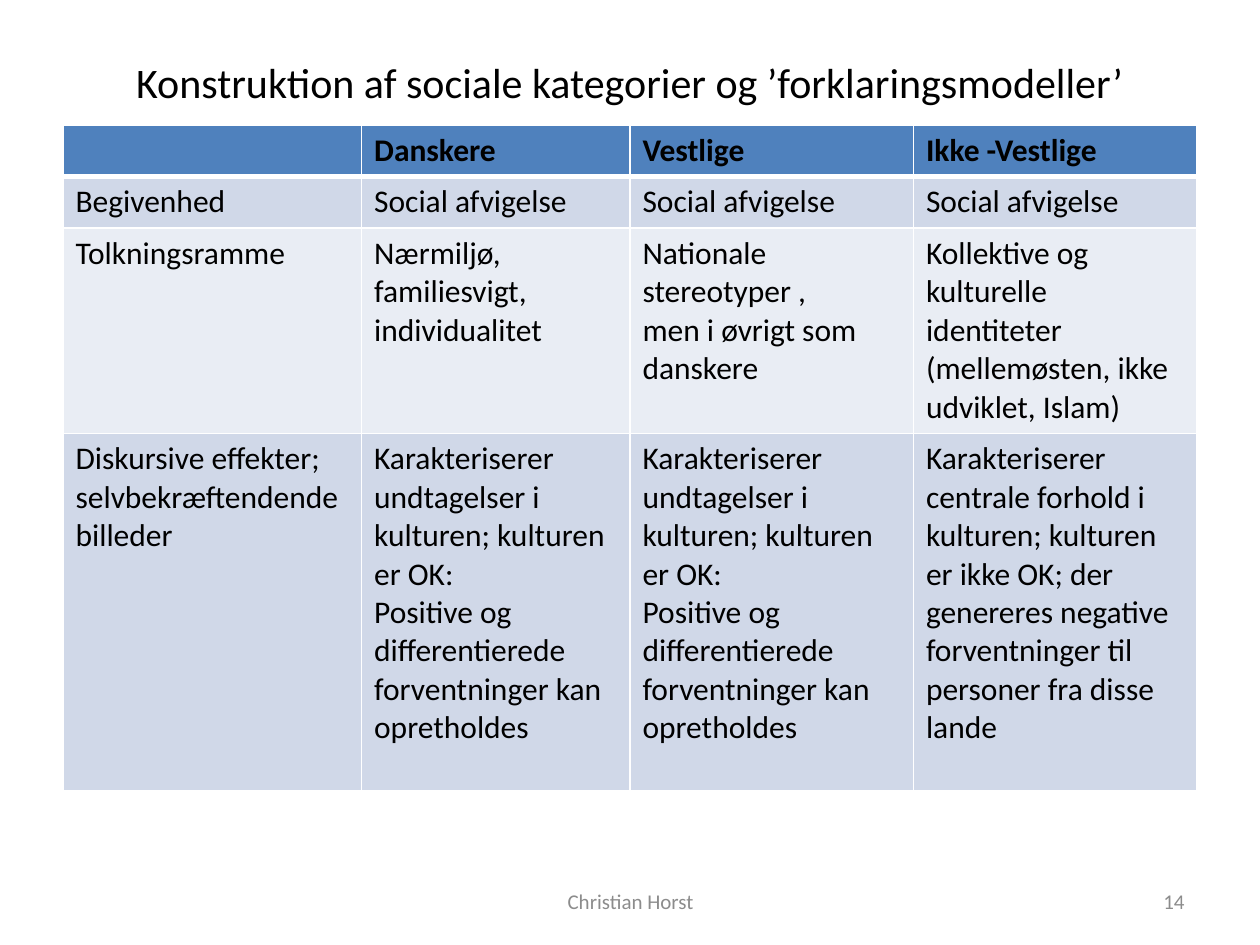
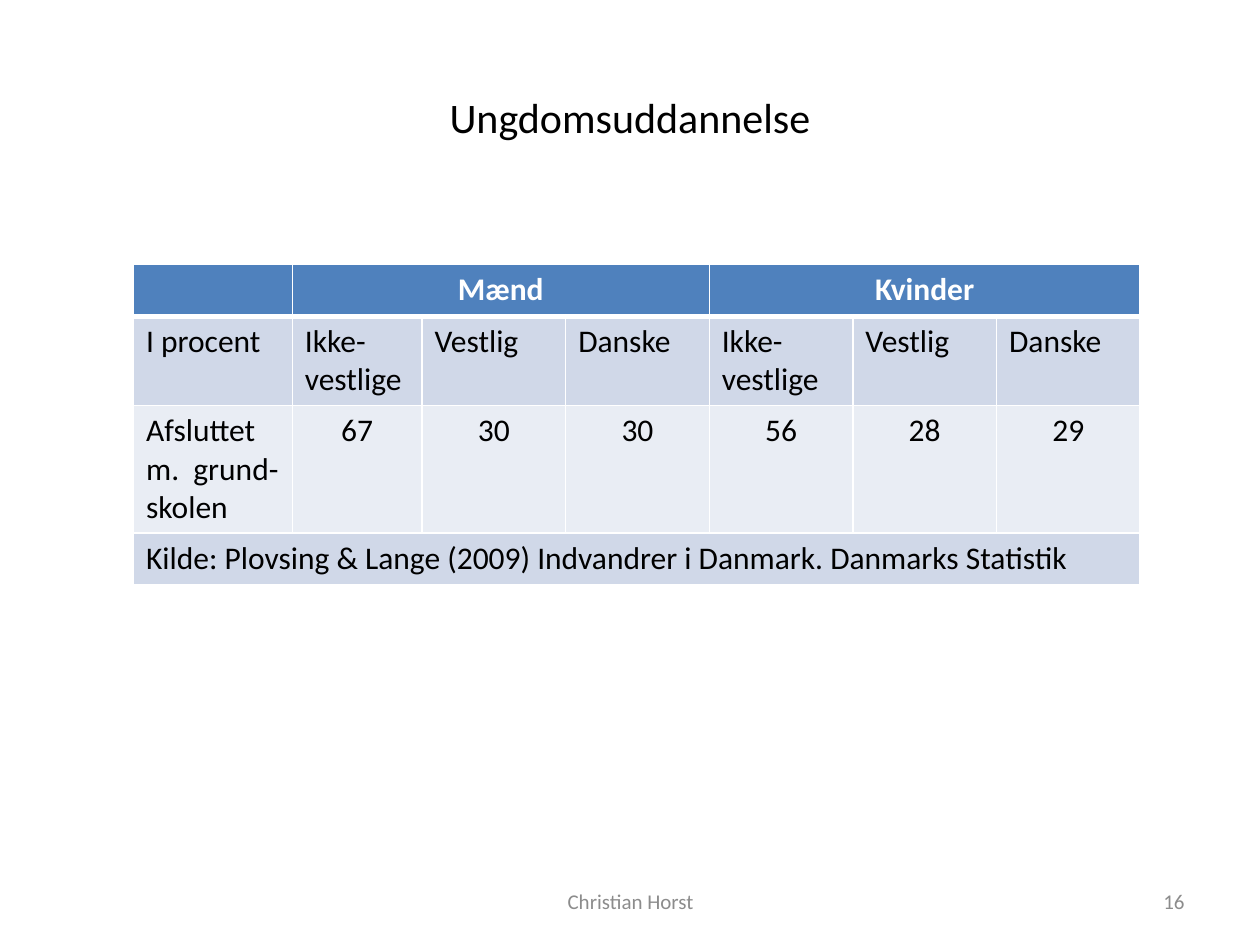
from dataclasses import dataclass

from lxml import etree
from pptx import Presentation
from pptx.dml.color import RGBColor
from pptx.enum.text import MSO_ANCHOR, PP_ALIGN
from pptx.oxml.ns import qn
from pptx.util import Inches, Pt

LEFT, CENTER, RIGHT = PP_ALIGN.LEFT, PP_ALIGN.CENTER, PP_ALIGN.RIGHT
MIDDLE = MSO_ANCHOR.MIDDLE


@dataclass(frozen=True)
class Theme:
    font: str = "Calibri"
    title_size: int = 24
    table_size: int = 18
    footer_size: int = 12
    text: str = "000000"
    white: str = "FFFFFF"
    footer: str = "8C8C8C"
    header_fill: str = "4F81BD"
    band_fills: tuple = ("D0D8E8", "E9EDF4")
    border: int = 1
    header_border: int = 3


class Deck:
    def __init__(self, theme):
        self.theme = theme
        self.presentation = Presentation()
        self.presentation.slide_width = Inches(10)
        self.presentation.slide_height = Inches(7.5)
        self.slide = None

    def add_slide(self, title, title_height, number):
        layout = self.presentation.slide_layouts[6]
        self.slide = self.presentation.slides.add_slide(layout)
        theme = self.theme
        self.add_text(title, (0.5, 0.3, 9, title_height), CENTER, theme.title_size, theme.text)
        footers = (
            (str(number), (7.17, 6.95, 2.33, 0.4), RIGHT),
            ("Christian Horst", (3.42, 6.95, 3.17, 0.4), CENTER),
        )
        for text, box, alignment in footers:
            self.add_text(text, box, alignment, theme.footer_size, theme.footer)

    def add_text(self, text, box, alignment, size, color):
        shape = self.slide.shapes.add_textbox(*map(Inches, box))
        frame = shape.text_frame
        frame.word_wrap = True
        frame.vertical_anchor = MIDDLE
        self.fill_text(frame, text, alignment, size, color)

    def fill_text(self, frame, text, alignment, size, color, bold=False):
        frame.text = text
        font_format = {"name": self.theme.font, "size": Pt(size), "bold": bold}
        for paragraph in frame.paragraphs:
            paragraph.alignment = alignment
            for run in paragraph.runs:
                for name, value in font_format.items():
                    setattr(run.font, name, value)
                run.font.color.rgb = RGBColor.from_string(color)

    def add_table(self, rows, position, widths, heights, header_color,
                  header_alignment=LEFT, centered_rows=(), spans=()):
        theme = self.theme
        left, top = map(Inches, position)
        table = self.slide.shapes.add_table(
            len(rows), len(widths), left, top,
            Inches(sum(widths)), Inches(sum(heights))).table
        for column, width in zip(table.columns, widths):
            column.width = Inches(width)
        for row, height in zip(table.rows, heights):
            row.height = Inches(height)
        for row_index, texts in enumerate(rows):
            is_header = row_index == 0
            fill = theme.header_fill if is_header else theme.band_fills[(row_index - 1) % 2]
            color = header_color if is_header else theme.text
            for column_index, text in enumerate(texts):
                cell = table.cell(row_index, column_index)
                cell.fill.solid()
                cell.fill.fore_color.rgb = RGBColor.from_string(fill)
                self.add_borders(cell, row_index)
                alignment = header_alignment if is_header else LEFT
                if row_index in centered_rows and column_index > 0:
                    alignment = CENTER
                if text:
                    self.fill_text(cell.text_frame, text, alignment,
                                   theme.table_size, color, is_header)
        for row_index, first, last in spans:
            table.cell(row_index, first).merge(table.cell(row_index, last))

    def add_borders(self, cell, row_index):
        theme = self.theme
        thick_side = {0: "a:lnB", 1: "a:lnT"}.get(row_index)
        properties = cell._tc.get_or_add_tcPr()
        for index, side in enumerate(("a:lnL", "a:lnR", "a:lnT", "a:lnB")):
            width = theme.header_border if side == thick_side else theme.border
            line = etree.Element(qn(side), w=str(Pt(width)))
            fill = etree.SubElement(line, qn("a:solidFill"))
            etree.SubElement(fill, qn("a:srgbClr"), val=theme.white)
            properties.insert(index, line)


def build_categories(deck):
    deck.add_slide("Konstruktion af sociale kategorier og ’forklaringsmodeller’", 0.69, 14)
    accepted = ("Karakteriserer undtagelser i kulturen; kulturen er OK:\n"
                "Positive og differentierede forventninger kan opretholdes")
    rows = (
        ("", "Danskere", "Vestlige", "Ikke -Vestlige"),
        ("Begivenhed",) + ("Social afvigelse",) * 3,
        ("Tolkningsramme",
         "Nærmiljø, familiesvigt, individualitet",
         "Nationale stereotyper ,\vmen i øvrigt som danskere",
         "Kollektive og kulturelle identiteter (mellemøsten, ikke udviklet, Islam)"),
        ("Diskursive effekter;\nselvbekræftendende\nbilleder",
         accepted,
         accepted,
         "Karakteriserer centrale forhold i kulturen; kulturen er ikke OK; "
         "der genereres negative forventninger til personer fra disse lande"),
    )
    deck.add_table(rows, (0.5, 0.99), (2.37, 2.13, 2.25, 2.25),
                   (0.41, 0.41, 1.63, 2.84), deck.theme.text)


def build_education(deck):
    deck.add_slide("Ungdomsuddannelse", 1.25, 16)
    source = "Kilde: Plovsing & Lange (2009) Indvandrer i Danmark. Danmarks Statistik"
    rows = (
        ("", "Mænd", "", "", "Kvinder", "", ""),
        ("I procent", "Ikke-vestlige", "Vestlig", "Danske", "Ikke- vestlige", "Vestlig", "Danske"),
        ("Afsluttet m.  grund-skolen", "67", "30", "30", "56", "28", "29"),
        (source,) + ("",) * 6,
    )
    deck.add_table(rows, (1.06, 2.1), (1.26, 1.03) + (1.14,) * 5,
                   (0.41, 0.71, 1.01, 0.41), deck.theme.white,
                   header_alignment=CENTER, centered_rows=(2,),
                   spans=((0, 1, 3), (0, 4, 6), (3, 0, 6)))


def main():
    deck = Deck(Theme())
    build_categories(deck)
    build_education(deck)
    deck.presentation.save("out.pptx")


if __name__ == "__main__":
    main()
